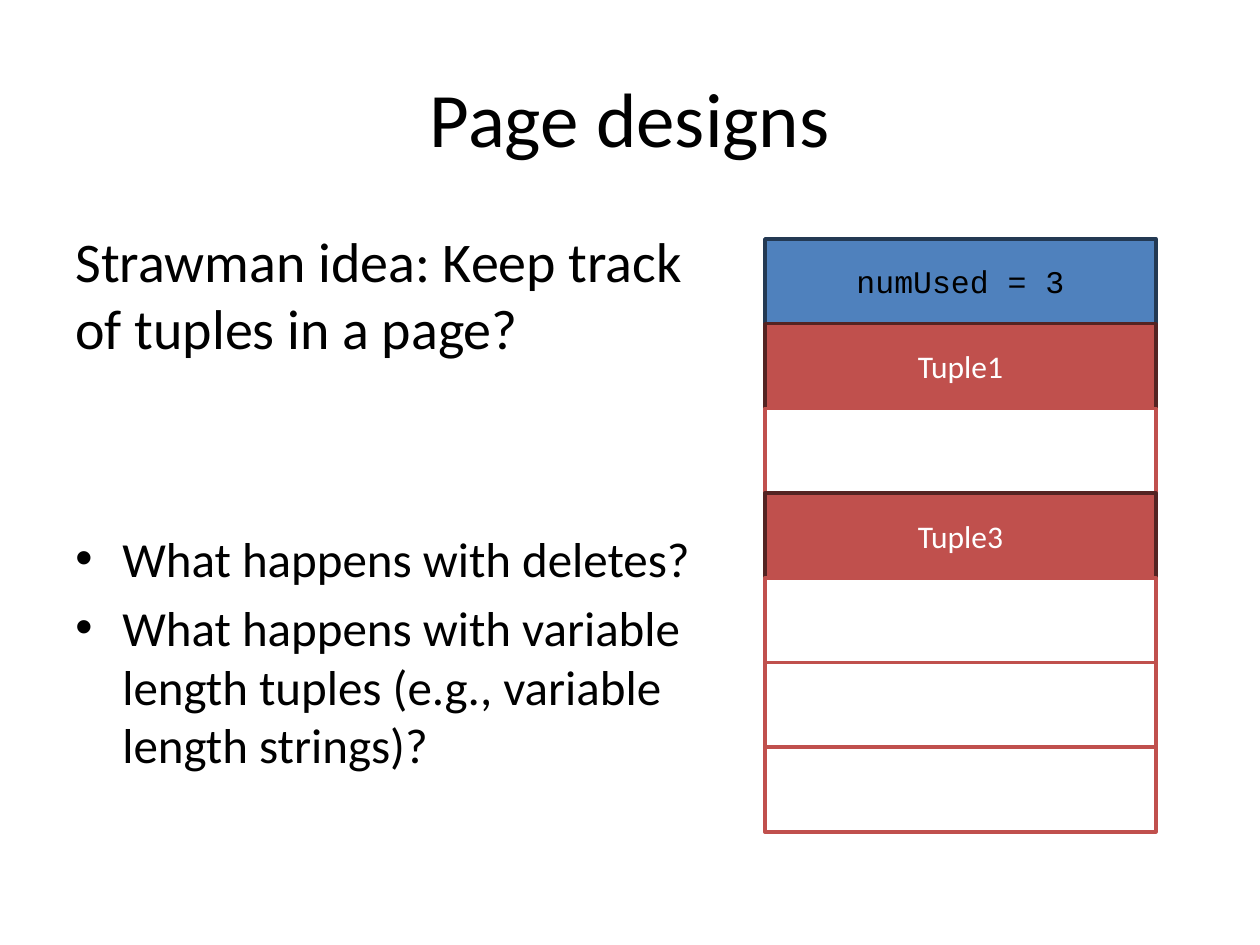
import pptx
import pptx.util
from lxml import etree
from pptx.dml.color import RGBColor
from pptx.enum.shapes import MSO_SHAPE
from pptx.enum.text import MSO_ANCHOR, PP_ALIGN
from pptx.oxml.ns import qn

BLACK = RGBColor(0x00, 0x00, 0x00)
WHITE = RGBColor(0xFF, 0xFF, 0xFF)
BLUE = RGBColor(0x4F, 0x81, 0xBD)
NAVY = RGBColor(0x23, 0x39, 0x53)
RED = RGBColor(0xC0, 0x50, 0x4D)
MAROON = RGBColor(0x54, 0x23, 0x22)

# Content
TITLE = "Page designs"
IDEA = "Strawman idea: Keep track of tuples in a page?"
QUESTIONS = [
    "What happens with deletes?",
    "What happens with variable length tuples (e.g., variable length strings)?",
]
SLOTS = ["numUsed = 3", "Tuple1", "", "Tuple3", "", "", ""]

# Slot styles: fill, line, text colour, font
HEADER = (BLUE, NAVY, BLACK, "Courier New")
USED = (RED, MAROON, WHITE, "Calibri")
FREE = (WHITE, RED, BLACK, "Calibri")

# Layout in px
PX_PER_INCH = 126
SLIDE_SIZE = (1260, 945)
TITLE_BOX = (63, 38, 1134, 157)
BODY_BOX = (63, 220, 639, 624)
PAGE_BOX = (765, 239, 391, 593)
BULLET_INDENT = 47


def px(length):
    return pptx.util.Emu(round(length * 914400 / PX_PER_INCH))


def set_font(paragraph, size, color=BLACK, name="Calibri"):
    paragraph.font.size = pptx.util.Pt(size)
    paragraph.font.color.rgb = color
    paragraph.font.name = name


def add_bullet(paragraph):
    properties = paragraph._p.get_or_add_pPr()
    properties.set("marL", str(px(BULLET_INDENT)))
    properties.set("indent", str(-px(BULLET_INDENT)))
    etree.SubElement(properties, qn("a:buFont")).set("typeface", "Arial")
    etree.SubElement(properties, qn("a:buChar")).set("char", "•")


deck = pptx.Presentation()
deck.slide_width, deck.slide_height = map(px, SLIDE_SIZE)
slide = deck.slides.add_slide(deck.slide_layouts[5])

# Title
title = slide.shapes.title
title.left, title.top, title.width, title.height = map(px, TITLE_BOX)
title.text_frame.text = TITLE
title.text_frame.vertical_anchor = MSO_ANCHOR.MIDDLE
title.text_frame.paragraphs[0].alignment = PP_ALIGN.CENTER
set_font(title.text_frame.paragraphs[0], 44)

# Idea, then the open questions after a gap
body = slide.shapes.add_textbox(*map(px, BODY_BOX)).text_frame
body.word_wrap = True
body.paragraphs[0].text = IDEA
set_font(body.paragraphs[0], 32)
for index, question in enumerate(QUESTIONS):
    bullet = body.add_paragraph()
    bullet.text = question
    bullet.space_before = pptx.util.Pt(5.6 if index else 96)
    add_bullet(bullet)
    set_font(bullet, 28)

# Page: a header over equal tuple slots
page_left, page_top, page_width, page_height = PAGE_BOX
slot_height = page_height / len(SLOTS)
for index, label in enumerate(SLOTS):
    fill, line, text_color, font = HEADER if index == 0 else USED if label else FREE
    slot = slide.shapes.add_shape(
        MSO_SHAPE.RECTANGLE,
        px(page_left), px(page_top + index * slot_height),
        px(page_width), px(slot_height),
    )
    slot.shadow.inherit = False
    slot.fill.solid()
    slot.fill.fore_color.rgb = fill
    slot.line.color.rgb = line
    slot.line.width = pptx.util.Pt(2)
    if label:
        slot.text_frame.text = label
        slot.text_frame.vertical_anchor = MSO_ANCHOR.MIDDLE
        slot.text_frame.paragraphs[0].alignment = PP_ALIGN.CENTER
        set_font(slot.text_frame.paragraphs[0], 18, text_color, font)

deck.save("out.pptx")
